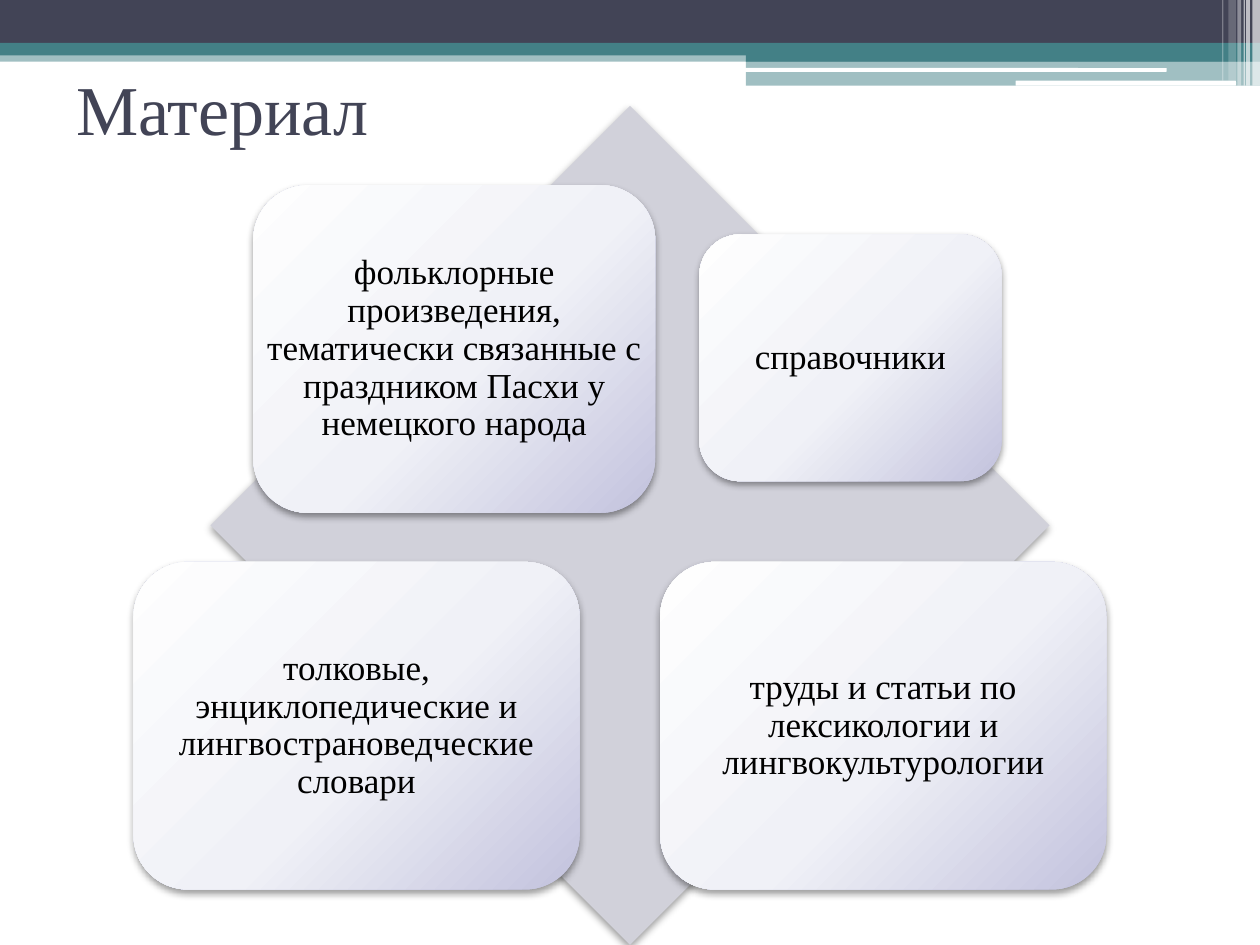
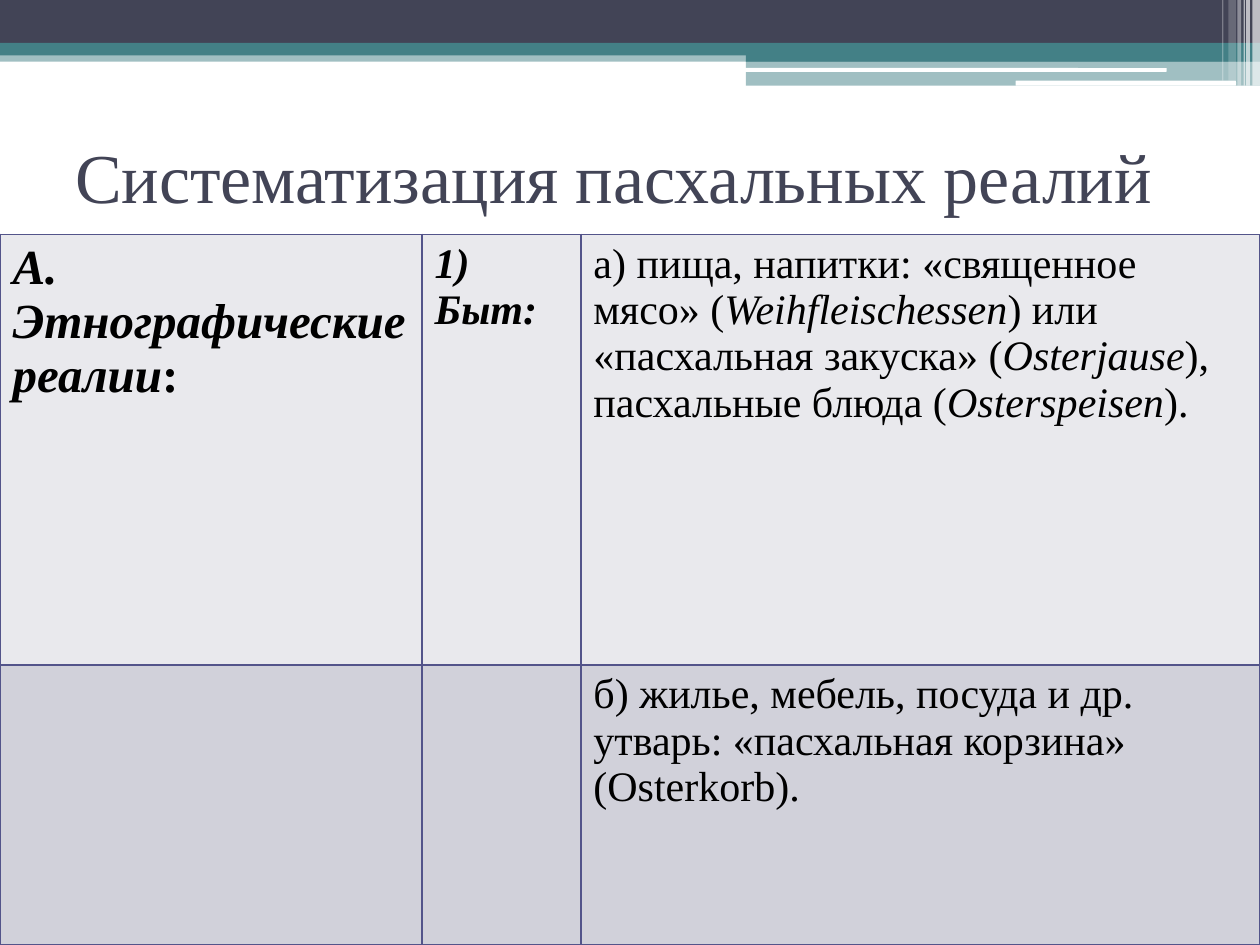
from lxml import etree
from pptx import Presentation
from pptx import util as u
from pptx.dml.color import RGBColor
from pptx.enum import shapes, text
from pptx.oxml import ns, parse_xml

FONT = "Times New Roman"
NAVY, TEAL, WHITE, BLACK = "424456", "438086", "FFFFFF", "000000"
LIGHT, GREY, BORDER = "E9E9ED", "D1D1DA", "53548A"
CARD_STOPS = [(0, "FEFEFE"), (55, "F0F1F7"), (100, "C2C2DD")]
RECT = shapes.MSO_SHAPE.RECTANGLE
ROUNDED = shapes.MSO_SHAPE.ROUNDED_RECTANGLE

BANDS = [
    (RECT, (0, 0.4, 10, 0.09), TEAL, 50),
    (RECT, (0, 0, 10, 0.34), NAVY, 100),
    (RECT, (0, 0.34, 10, 0.1), TEAL, 100),
    (RECT, (5.92, 0.39, 4.08, 0.1), TEAL, 100),
    (RECT, (5.92, 0.48, 4.08, 0.2), TEAL, 50),
    (ROUNDED, (5.91, 0.54, 3.35, 0.03), WHITE, 100),
    (ROUNDED, (8.06, 0.64, 1.75, 0.04), WHITE, 100),
]
STRIPES = [
    (9.94, 0.06, 0.68, 65),
    (9.89, 0.03, 0.68, 65),
    (9.87, 0.01, 0.68, 60),
    (9.82, 0.03, 0.68, 40),
    (9.75, 0.06, 0.64, 20),
    (9.7, 0.01, 0.64, 30),
]
CARDS = [
    ((0.34, 0.63, 3.19, 2.6), "фольклорные произведения, тематически связанные с "
                              "праздником Пасхи у немецкого народа"),
    ((3.88, 1.02, 2.4, 1.96), "справочники"),
    ((-0.61, 3.62, 3.54, 2.6), "толковые, энциклопедические и "
                               "лингвострановедческие словари"),
    ((3.57, 3.62, 3.54, 2.6), "труды и статьи по лексикологии и лингвокультурологии"),
]
COLUMNS = [3.35, 1.26, 5.39]
ROWS = [(3.42, LIGHT), (2.22, GREY)]
CELLS = {
    (0, 0): (28, [("А. Этнографические реалии", "bi"), (":", "b")]),
    (0, 1): (24, [("1) Быт:", "bi")]),
    (0, 2): (24, [("а) пища, напитки: «священное мясо» (", ""), ("Weihfleischessen", "i"),
                  (") или «пасхальная закуска» (", ""), ("Osterjause", "i"),
                  ("), пасхальные блюда (", ""), ("Osterspeisen", "i"), (").", "")]),
    (1, 2): (24, [("б) жилье, мебель, посуда и др. утварь: "
                   "«пасхальная корзина» (Osterkorb).", "")]),
}


def color(value):
    return RGBColor.from_string(value)


def inches(box):
    return [u.Inches(length) for length in box]


def add_figure(page, kind, box, fill=None, opacity=100):
    figure = page.shapes.add_shape(kind, *inches(box))
    figure.shadow.inherit = False
    figure.line.fill.background()
    if fill:
        figure.fill.solid()
        figure.fill.fore_color.rgb = color(fill)
    if opacity < 100:
        tint = figure.element.spPr.find(".//" + ns.qn("a:srgbClr"))
        etree.SubElement(tint, ns.qn("a:alpha"), val=str(opacity * 1000))
    return figure


def add_soft_shadow(figure):
    effects = figure.element.spPr.find(ns.qn("a:effectLst"))
    effects.append(parse_xml(
        f'<a:outerShdw {ns.nsdecls("a")} blurRad="{u.Pt(4.1)}" dist="{u.Pt(2)}" '
        f'dir="5400000" rotWithShape="0"><a:srgbClr val="{BLACK}">'
        '<a:alpha val="40000"/></a:srgbClr></a:outerShdw>'))


def add_card_gradient(figure):
    stops = "".join(f'<a:gs pos="{place * 1000}"><a:srgbClr val="{tint}"/></a:gs>'
                    for place, tint in CARD_STOPS)
    gradient = parse_xml(
        f'<a:gradFill {ns.nsdecls("a")} rotWithShape="1"><a:gsLst>{stops}</a:gsLst>'
        '<a:path path="circle"><a:fillToRect l="-40000" t="-90000" r="140000" b="190000"/>'
        '</a:path></a:gradFill>')
    figure.element.spPr.find(ns.qn("a:prstGeom")).addnext(gradient)


def style_span(span, size, tint, marks=""):
    span.font.name = FONT
    span.font.size = u.Pt(size)
    span.font.color.rgb = color(tint)
    span.font.bold = "b" in marks
    span.font.italic = "i" in marks


def add_text(page, box, words, size, tint):
    frame = page.shapes.add_textbox(*inches(box)).text_frame
    frame.word_wrap = True
    frame.vertical_anchor = text.MSO_ANCHOR.MIDDLE
    frame.text = words
    style_span(frame.paragraphs[0].runs[0], size, tint)
    return frame


def add_page(deck, title, title_box):
    page = deck.slides.add_slide(deck.slide_layouts[6])
    for kind, box, fill, opacity in BANDS:
        add_figure(page, kind, box, fill, opacity)
    for left, width, height, opacity in STRIPES:
        add_figure(page, RECT, (left, 0, width, height), WHITE, opacity)
    add_text(page, title_box, title, 40, NAVY)
    return page


def add_card(page, box, words):
    card = add_figure(page, ROUNDED, box)
    add_card_gradient(card)
    add_soft_shadow(card)
    frame = add_text(page, box, words, 20, BLACK)
    frame.margin_left = frame.margin_right = u.Inches(0.08)
    frame.margin_top = frame.margin_bottom = u.Inches(0.08)
    para = frame.paragraphs[0]
    para.alignment = text.PP_ALIGN.CENTER
    para.line_spacing = 0.9


def add_material_diagram(page, box):
    left, top = box[:2]
    add_soft_shadow(add_figure(page, shapes.MSO_SHAPE.DIAMOND, box, GREY))
    for (across, down, width, height), words in CARDS:
        add_card(page, (left + across, top + down, width, height), words)


def style_cell(cell, fill):
    properties = cell._tc.get_or_add_tcPr()
    for side in ("lnL", "lnR", "lnT", "lnB"):
        properties.append(parse_xml(
            f'<a:{side} {ns.nsdecls("a")} w="{u.Pt(1)}"><a:solidFill>'
            f'<a:srgbClr val="{BORDER}"/></a:solidFill></a:{side}>'))
    cell.fill.solid()
    cell.fill.fore_color.rgb = color(fill)


def add_realia_table(page, box):
    table = page.shapes.add_table(len(ROWS), len(COLUMNS), *inches(box)).table
    table.first_row = table.horz_banding = False
    for column, width in zip(table.columns, COLUMNS):
        column.width = u.Inches(width)
    for index, (height, fill) in enumerate(ROWS):
        table.rows[index].height = u.Inches(height)
        for cell in table.rows[index].cells:
            style_cell(cell, fill)
    for position, (size, spans) in CELLS.items():
        para = table.cell(*position).text_frame.paragraphs[0]
        for words, marks in spans:
            span = para.add_run()
            span.text = words
            style_span(span, size, BLACK, marks)


def main():
    deck = Presentation()
    deck.slide_width, deck.slide_height = inches((10, 7.5))
    material = add_page(deck, "Материал", (0.51, 0.36, 9, 0.99))
    add_material_diagram(material, (1.67, 0.84, 6.66, 6.66))
    realia = add_page(deck, "Систематизация пасхальных реалий", (0.5, 0.84, 9, 1.1))
    add_realia_table(realia, (0, 1.86, 10, 5.64))
    deck.save("out.pptx")


if __name__ == "__main__":
    main()
